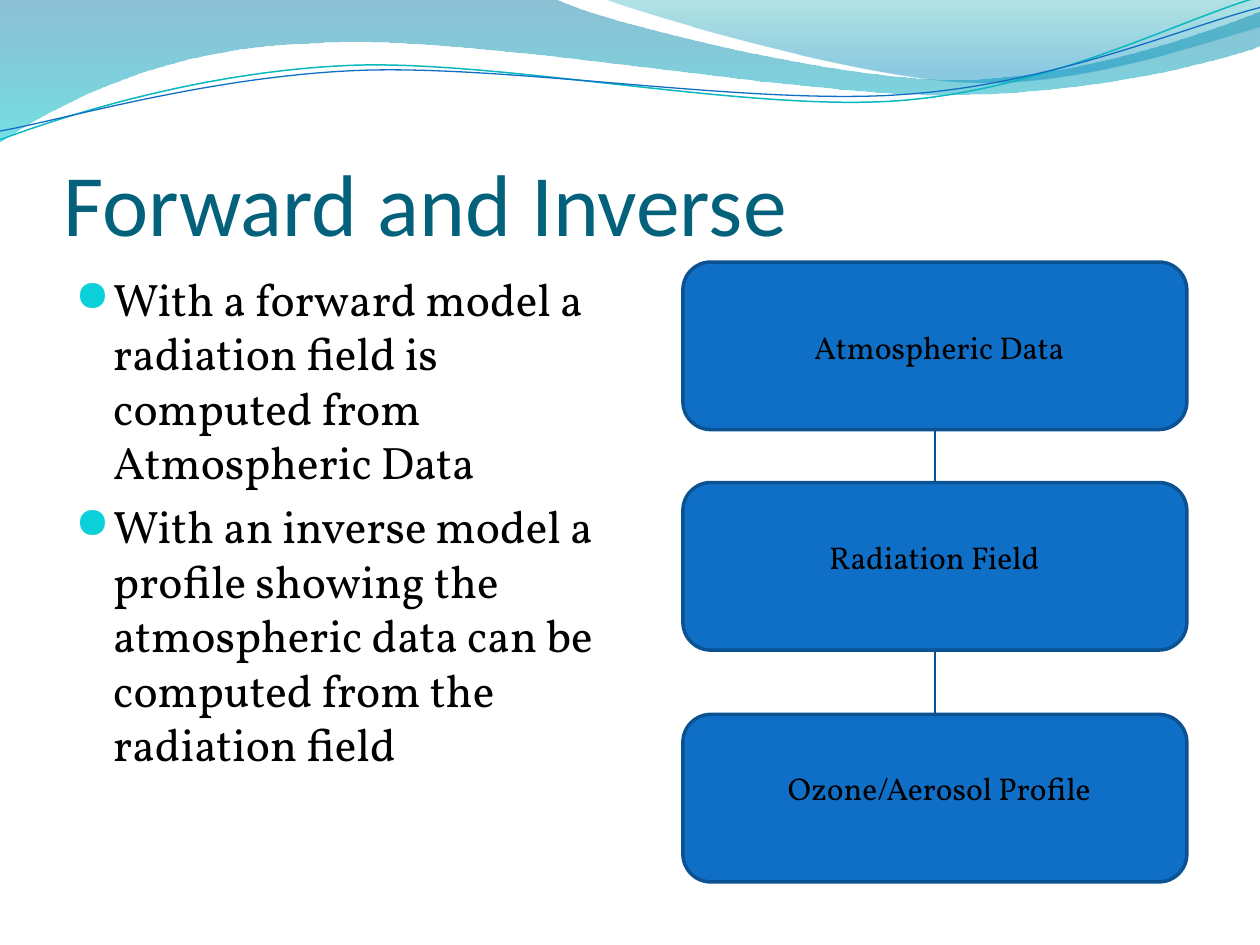
from lxml import etree
from pptx import Presentation
from pptx.dml.color import RGBColor
from pptx.enum.shapes import MSO_CONNECTOR, MSO_SHAPE
from pptx.enum.text import MSO_ANCHOR, MSO_AUTO_SIZE, PP_ALIGN
from pptx.oxml import parse_xml
from pptx.oxml.ns import nsdecls, qn
from pptx.util import Inches, Pt

ROUND = MSO_SHAPE.ROUNDED_RECTANGLE
STRAIGHT = MSO_CONNECTOR.STRAIGHT
LEFT, CENTER = PP_ALIGN.LEFT, PP_ALIGN.CENTER
TOP, BOTTOM = MSO_ANCHOR.TOP, MSO_ANCHOR.BOTTOM
NO_FIT = MSO_AUTO_SIZE.NONE

COLORS = {
    "title": "04617B", "text": "000000", "bullet": "0BD0D9",
    "box": "0F6FC6", "edge": "0B5292", "link": "095295",
    "teal": "0AB8BF", "blue": "0F6FC6",
    "deep": "0074A1", "aqua": "00C6CF", "sea": "00A1A9", "sky": "008BBF",
}
HEAD, BODY = "Calibri", "Vollkorn"

# Each step is an end point (2 numbers) or a curve (6 numbers)
BANDS = [
    ([(0, 0), (4.4, -0.01), (4.76, 0.17, 6.64, 0.63, 7.58, 0.63),
      (8.53, 0.63, 9.58, 0.26, 10, 0.09), (10.01, 0.36),
      (9.83, 0.44, 8.7, 0.76, 7.46, 0.75),
      (6.22, 0.75, 3.82, 0.28, 2.57, 0.34),
      (1.29, 0.36, 0.46, 0.83, -0.01, 1.13)],
     [(0, "deep", 45), (100, "aqua", 55)]),
    ([(4.79, -0.01), (5.09, 0.11, 6.82, 0.62, 7.69, 0.65),
      (8.56, 0.69, 9.61, 0.32, 10, 0.21), (10, 0)],
     [(0, "sea", 30), (80, "sky", 45)]),
]
WAVES = [
    ([(0, 1.11), (0.48, 0.93, 1.58, 0.57, 2.77, 0.52),
      (3.95, 0.47, 5.93, 0.89, 7.13, 0.8),
      (8.33, 0.71, 9.38, 0.15, 9.98, -0.02)], "teal", 0.85),
    ([(0, 1.04), (0.47, 0.96, 1.64, 0.61, 2.83, 0.56),
      (4.03, 0.51, 5.97, 0.84, 7.17, 0.75),
      (8.36, 0.67, 9.41, 0.21, 10, 0.06)], "blue", 0.75),
]
POINTS = [
    "With a forward model a radiation field is computed from Atmospheric Data",
    "With an inverse model a profile showing the atmospheric data can be "
    "computed from the radiation field",
]
# Label, box top, then label left, top and width
STAGES = [
    ("Atmospheric Data", 2.08, 5.58, 2.25, 3.75),
    ("Radiation Field", 3.83, 5.5, 3.92, 3.83),
    ("Ozone/Aerosol Profile", 5.67, 5.58, 5.75, 3.75),
]


def color(name):
    return RGBColor.from_string(COLORS[name])


def add_free(slide, path, close):
    """Draw a path, then bend each run of three points into a curve."""
    dots = [(Inches(x), Inches(y)) for step in path
            for x, y in zip(step[::2], step[1::2])]
    pen = slide.shapes.build_freeform(*dots[0])
    pen.add_line_segments(dots[1:], close=close)
    shape = pen.convert_to_shape()
    shape.shadow.inherit = False
    lines = iter(list(shape._element.iter(qn("a:lnTo"))))
    for step in path[1:]:
        first = next(lines)
        if len(step) == 6:
            curve = etree.Element(qn("a:cubicBezTo"))
            first.addprevious(curve)
            for line in (first, next(lines), next(lines)):
                curve.append(line[0])
                line.getparent().remove(line)
    return shape


def add_band(slide, path, stops):
    band = add_free(slide, path, True)
    band.line.fill.background()
    marks = "".join(
        f'<a:gs pos="{pos * 1000}"><a:srgbClr val="{COLORS[name]}">'
        f'<a:alpha val="{alpha * 1000}"/></a:srgbClr></a:gs>'
        for pos, name, alpha in stops)
    fill = parse_xml(
        f'<a:gradFill {nsdecls("a")} rotWithShape="1"><a:gsLst>{marks}</a:gsLst>'
        '<a:lin ang="5400000" scaled="0"/></a:gradFill>')
    band._element.spPr.find(qn("a:custGeom")).addnext(fill)


def add_wave(slide, path, name, width):
    wave = add_free(slide, path, False)
    wave.fill.background()
    wave.line.color.rgb = color(name)
    wave.line.width = Pt(width)


def style(para, font, size, name, align):
    para.alignment = align
    para.font.name = font
    para.font.size = Pt(size)
    para.font.color.rgb = color(name)


def set_title(slide, text):
    title = slide.shapes.title
    title.left, title.top = Inches(0.5), Inches(0.77)
    title.width, title.height = Inches(9), Inches(1.25)
    frame = title.text_frame
    frame.text = text
    frame.auto_size = NO_FIT
    frame.vertical_anchor = BOTTOM
    frame.margin_left = frame.margin_right = frame.margin_bottom = 0
    style(frame.paragraphs[0], HEAD, 50, "title", LEFT)


def add_text(slide, lines, left, top, width, height, size, align, anchor):
    box = slide.shapes.add_textbox(
        Inches(left), Inches(top), Inches(width), Inches(height))
    frame = box.text_frame
    frame.word_wrap = True
    frame.vertical_anchor = anchor
    frame.text = "\n".join(lines)
    for para in frame.paragraphs:
        style(para, BODY, size, "text", align)
    return frame.paragraphs


def add_bullet(para):
    para.space_before = Pt(5.2)
    props = para._p.get_or_add_pPr()
    props.set("marL", str(Inches(0.3)))
    props.set("indent", str(-Inches(0.3)))
    marks = parse_xml(
        f'<a:pPr {nsdecls("a")}><a:buClr><a:srgbClr val="{COLORS["bullet"]}"/>'
        '</a:buClr><a:buSzPct val="95000"/><a:buFont typeface="OpenSymbol"/>'
        '<a:buChar char="●"/></a:pPr>')
    spot = props.find(qn("a:spcBef"))
    for item in reversed(list(marks)):
        spot.addnext(item)


def add_box(slide, top):
    box = slide.shapes.add_shape(
        ROUND, Inches(5.42), Inches(top), Inches(4), Inches(1.33))
    box.shadow.inherit = False
    box.fill.solid()
    box.fill.fore_color.rgb = color("box")
    box.line.color.rgb = color("edge")
    box.line.width = Pt(2)
    return box


def add_link(slide, upper, lower):
    link = slide.shapes.add_connector(STRAIGHT, 0, 0, 0, 0)
    link.begin_connect(upper, 2)
    link.end_connect(lower, 0)
    link.line.color.rgb = color("link")
    link.line.width = Pt(0.75)
    etree.SubElement(link._element.spPr, qn("a:effectLst"))


def main():
    deck = Presentation()
    deck.slide_width, deck.slide_height = Inches(10), Inches(7.5)
    slide = deck.slides.add_slide(deck.slide_layouts[5])

    # Top decoration
    for path, stops in BANDS:
        add_band(slide, path, stops)
    for path, name, width in WAVES:
        add_wave(slide, path, name, width)

    # Title and bullets
    set_title(slide, "Forward and Inverse")
    for para in add_text(slide, POINTS, 0.5, 2.1, 4.42, 4.85, 26, LEFT, TOP):
        add_bullet(para)

    # Flow of boxes, links and labels
    boxes = [add_box(slide, stage[1]) for stage in STAGES]
    for upper, lower in zip(boxes, boxes[1:]):
        add_link(slide, upper, lower)
    for label, _, left, top, width in STAGES:
        add_text(slide, [label], left, top, width, 0.7, 18, CENTER, BOTTOM)

    deck.save("out.pptx")


if __name__ == "__main__":
    main()
